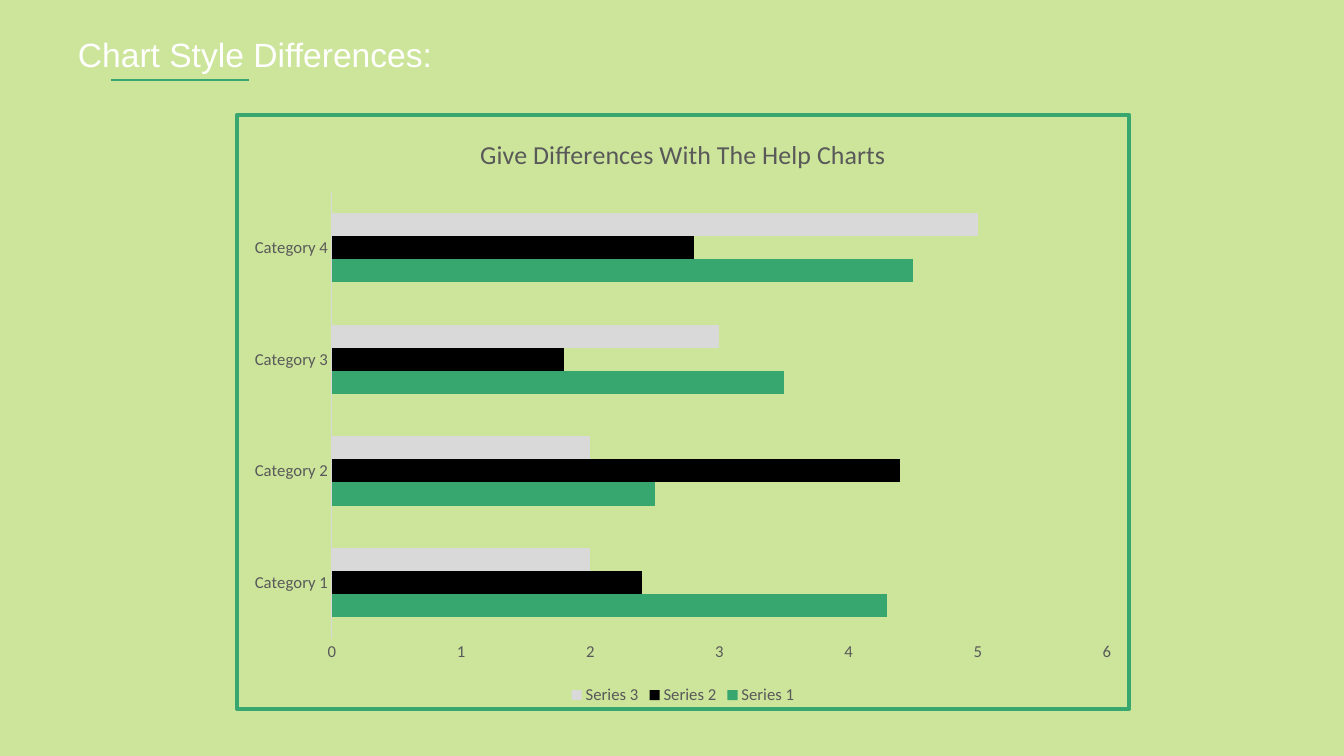
from lxml import etree
from pptx import Presentation
from pptx.chart.data import CategoryChartData
from pptx.dml.color import RGBColor
from pptx.enum.chart import XL_CHART_TYPE as ChartType
from pptx.enum.chart import XL_LEGEND_POSITION as LegendPosition
from pptx.enum.chart import XL_TICK_MARK as TickMark
from pptx.enum.shapes import MSO_CONNECTOR as Connector
from pptx.enum.text import MSO_AUTO_SIZE as AutoSize
from pptx.oxml import parse_xml
from pptx.oxml.ns import nsdecls, qn
from pptx.util import Emu, Pt

EMU_PER_PX = 914400 / 100.8
COLORS = {
    "background": "CCE59B",
    "green": "37A76F",
    "black": "000000",
    "gray": "D9D9D9",
    "label": "595959",
    "white": "FFFFFF",
}
CATEGORIES = [f"Category {number}" for number in range(1, 5)]
SERIES = [
    ("Series 1", (4.3, 2.5, 3.5, 4.5), "green"),
    ("Series 2", (2.4, 4.4, 1.8, 2.8), "black"),
    ("Series 3", (2, 2, 3, 5), "gray"),
]


def px(length):
    return Emu(round(length * EMU_PER_PX))


def color(name):
    return RGBColor.from_string(COLORS[name])


def style_font(font, name, size, color_name):
    font.name = name
    font.size = Pt(size)
    font.bold = False
    font.color.rgb = color(color_name)


def add_heading(slide, left, top, width, height):
    box = slide.shapes.add_textbox(px(left), px(top), px(width), px(height))
    frame = box.text_frame
    frame.word_wrap = True
    frame.auto_size = AutoSize.SHAPE_TO_FIT_TEXT
    paragraph = frame.paragraphs[0]
    paragraph.text = "Chart Style Differences:"
    style_font(paragraph.font, "Arial", 24, "white")

    line_left, line_top = left + 43, top + height
    underline = slide.shapes.add_connector(
        Connector.STRAIGHT,
        px(line_left), px(line_top), px(line_left + 138), px(line_top),
    )
    underline.line.color.rgb = color("green")
    underline.line.width = Pt(1.5)
    etree.SubElement(underline._element.spPr, qn("a:effectLst"))


def add_chart_border(chart, color_name, width):
    border = parse_xml(
        f'<c:spPr {nsdecls("c", "a")}><a:noFill/>'
        f'<a:ln w="{Pt(width)}"><a:solidFill><a:srgbClr val="{COLORS[color_name]}"/>'
        "</a:solidFill><a:round/></a:ln></c:spPr>"
    )
    chart._chartSpace.find(qn("c:chart")).addnext(border)


def add_bar_chart(slide, left, top, width, height):
    data = CategoryChartData()
    data.categories = CATEGORIES
    for name, values, _ in SERIES:
        data.add_series(name, values)
    chart = slide.shapes.add_chart(
        ChartType.BAR_CLUSTERED, px(left), px(top), px(width), px(height), data
    ).chart
    style_font(chart.font, "Calibri", 12, "label")
    add_chart_border(chart, "green", 2.75)

    chart.has_title = True
    title = chart.chart_title.text_frame.paragraphs[0]
    title.text = "Give Differences With The Help Charts"
    style_font(title.font, "Calibri", 18.6, "label")
    chart.chart_title.include_in_layout = False

    chart.has_legend = True
    chart.legend.position = LegendPosition.BOTTOM
    chart.legend.include_in_layout = False
    style_font(chart.legend.font, "Calibri", 12, "label")

    plot = chart.plots[0]
    plot.gap_width = 182
    plot.vary_by_categories = False
    for series, (_, _, color_name) in zip(plot.series, SERIES):
        series.format.fill.solid()
        series.format.fill.fore_color.rgb = color(color_name)
        series.invert_if_negative = False

    for axis in (chart.category_axis, chart.value_axis):
        axis.has_major_gridlines = False
        axis.major_tick_mark = TickMark.NONE
        axis.minor_tick_mark = TickMark.NONE
        style_font(axis.tick_labels.font, "Calibri", 12, "label")
    chart.category_axis.format.line.color.rgb = color("gray")
    chart.category_axis.format.line.width = Pt(0.75)
    chart.value_axis.format.line.fill.background()
    chart.value_axis.minimum_scale = 0
    chart.value_axis.maximum_scale = 6
    chart.value_axis.major_unit = 1


def main():
    presentation = Presentation()
    presentation.slide_width = px(1344)
    presentation.slide_height = px(756)
    slide = presentation.slides.add_slide(presentation.slide_layouts[6])
    slide.background.fill.solid()
    slide.background.fill.fore_color.rgb = color("background")
    add_bar_chart(slide, 235, 113, 896, 598)
    add_heading(slide, 68, 29, 440, 51)
    presentation.save("out.pptx")


if __name__ == "__main__":
    main()
